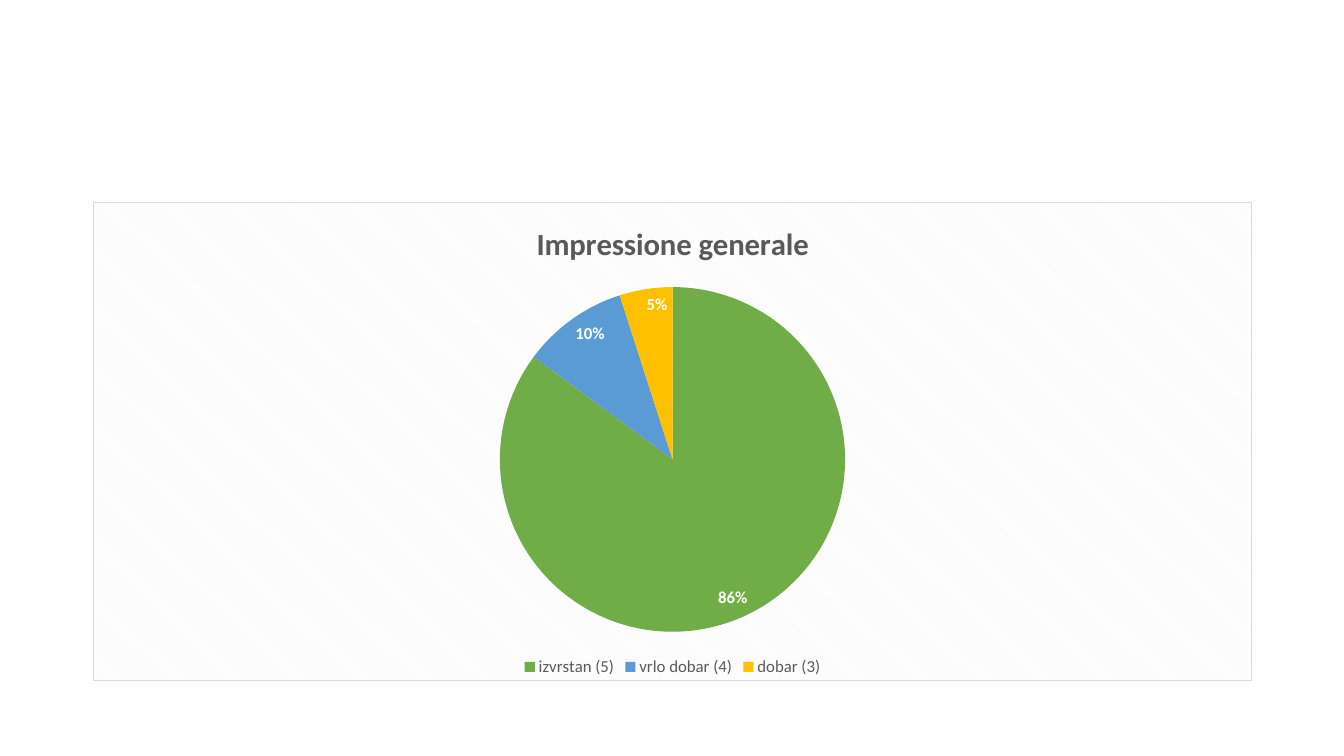
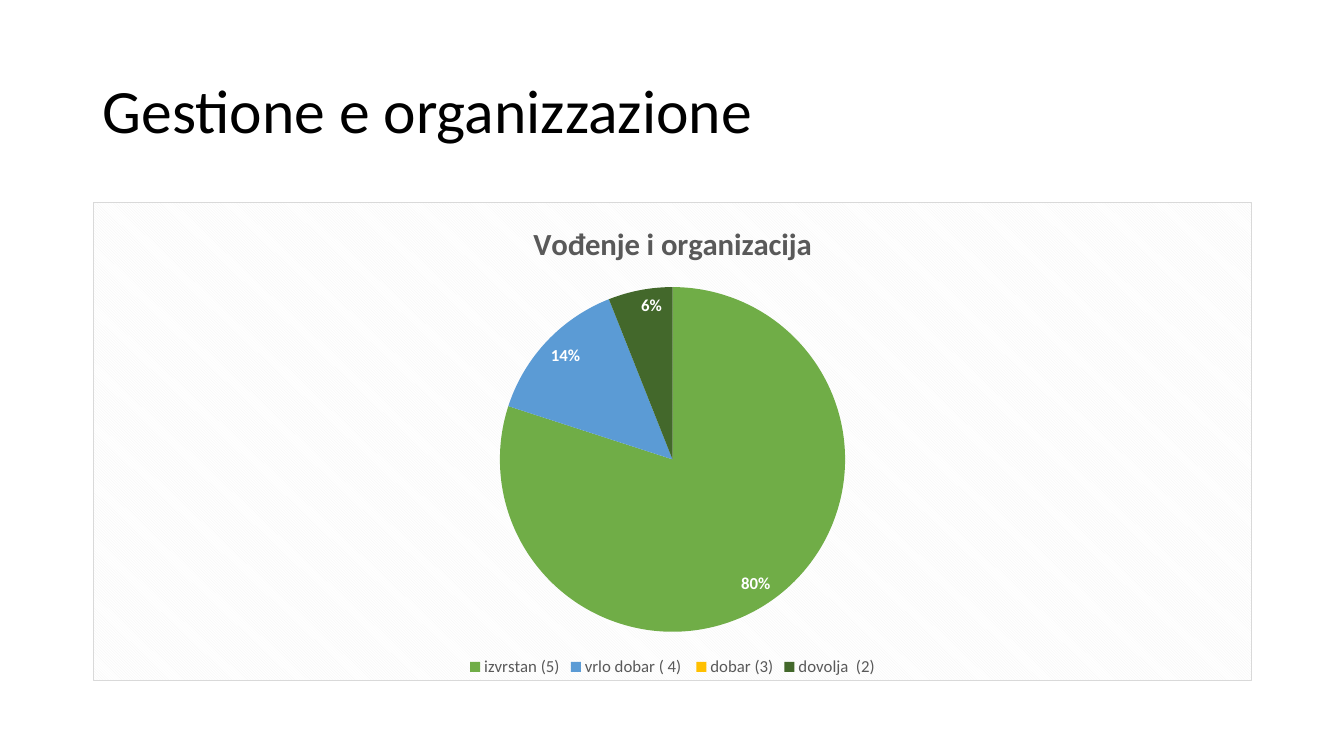
from dataclasses import dataclass
from pptx import Presentation
from pptx.chart.data import CategoryChartData as Data
from pptx.dml.color import RGBColor as RGB
from pptx.enum.chart import XL_CHART_TYPE as Kind, XL_LABEL_POSITION as Spot, XL_LEGEND_POSITION as Side
from pptx.enum.text import MSO_ANCHOR as Anchor
from pptx.oxml import parse_xml
from pptx.oxml.ns import nsdecls, qn
from pptx.util import Inches, Pt


@dataclass(frozen=True)
class Theme:
    face: str = "Calibri"
    ink: str = "000000"
    gray: str = "595959"
    white: str = "FFFFFF"
    hatch: str = "F2F2F2"
    edge: str = "D9D9D9"
    slices: tuple = ("70AD47", "5B9BD5", "FFC000", "43682B")
    head: int = 44
    title: int = 22
    note: int = 12
    base: int = 10
    left: float = 0.92
    width: float = 11.5


THEME = Theme()


def style(font, size, color, bold=False):
    font.name = THEME.face
    font.size = Pt(size)
    font.bold = bold
    font.color.rgb = RGB.from_string(color)


def add_head(slide, text):
    box = slide.shapes.add_textbox(
        Inches(THEME.left), Inches(0.4), Inches(THEME.width), Inches(1.45))
    frame = box.text_frame
    frame.word_wrap = True
    frame.vertical_anchor = Anchor.MIDDLE
    frame.text = text
    para = frame.paragraphs[0]
    para.line_spacing = 0.9
    style(para.runs[0].font, THEME.head, THEME.ink)


def add_frame(chart):
    # Hatched chart area with a thin, square border
    body = chart.element.find(qn("c:chart"))
    body.addprevious(parse_xml(f'<c:roundedCorners {nsdecls("c")} val="0"/>'))
    body.addnext(parse_xml(
        f'<c:spPr {nsdecls("c", "a")}><a:pattFill prst="dkDnDiag">'
        f'<a:fgClr><a:srgbClr val="{THEME.hatch}"/></a:fgClr>'
        f'<a:bgClr><a:srgbClr val="{THEME.white}"/></a:bgClr></a:pattFill>'
        f'<a:ln w="{Pt(0.75)}"><a:solidFill><a:srgbClr val="{THEME.edge}"/>'
        '</a:solidFill></a:ln></c:spPr>'))


def add_pie(slide, title, grades):
    data = Data()
    data.categories = list(grades)
    data.add_series(title, list(grades.values()))
    chart = slide.shapes.add_chart(
        Kind.PIE, Inches(THEME.left), Inches(2), Inches(THEME.width),
        Inches(4.76), data).chart
    style(chart.font, THEME.base, THEME.ink)
    add_frame(chart)

    # Title and legend
    chart.has_title = True
    frame = chart.chart_title.text_frame
    frame.text = title
    style(frame.paragraphs[0].runs[0].font, THEME.title, THEME.gray, True)
    chart.has_legend = True
    chart.legend.position = Side.BOTTOM
    chart.legend.include_in_layout = False
    style(chart.legend.font, THEME.note, THEME.gray)

    # Slices
    plot = chart.plots[0]
    plot.vary_by_categories = True
    for i, color in enumerate(THEME.slices[:len(grades)]):
        look = plot.series[0].points[i].format
        look.fill.solid()
        look.fill.fore_color.rgb = RGB.from_string(color)
        look.line.fill.background()

    # Labels: values are rounded percentages, zero stays blank
    labels = plot.series[0].data_labels
    labels.show_value = True
    labels.show_percentage = False
    labels.number_format = '0"%";;'
    labels.number_format_is_linked = False
    labels.position = Spot.INSIDE_END
    style(labels.font, THEME.note, THEME.white, True)


def main():
    deck = Presentation()
    deck.slide_width, deck.slide_height = Inches(13.33), Inches(7.5)
    blank = deck.slide_layouts[6]

    # General impression
    slide = deck.slides.add_slide(blank)
    add_pie(slide, "Impressione generale",
            {"izvrstan (5)": 86, "vrlo dobar (4)": 10, "dobar (3)": 5})

    # Management and organisation
    slide = deck.slides.add_slide(blank)
    add_head(slide, "Gestione e organizzazione")
    add_pie(slide, "Vođenje i organizacija",
            {"izvrstan (5)": 80, "vrlo dobar ( 4) ": 14, "dobar (3)": 0,
             "dovolja  (2)": 6})

    deck.save("out.pptx")


if __name__ == "__main__":
    main()
